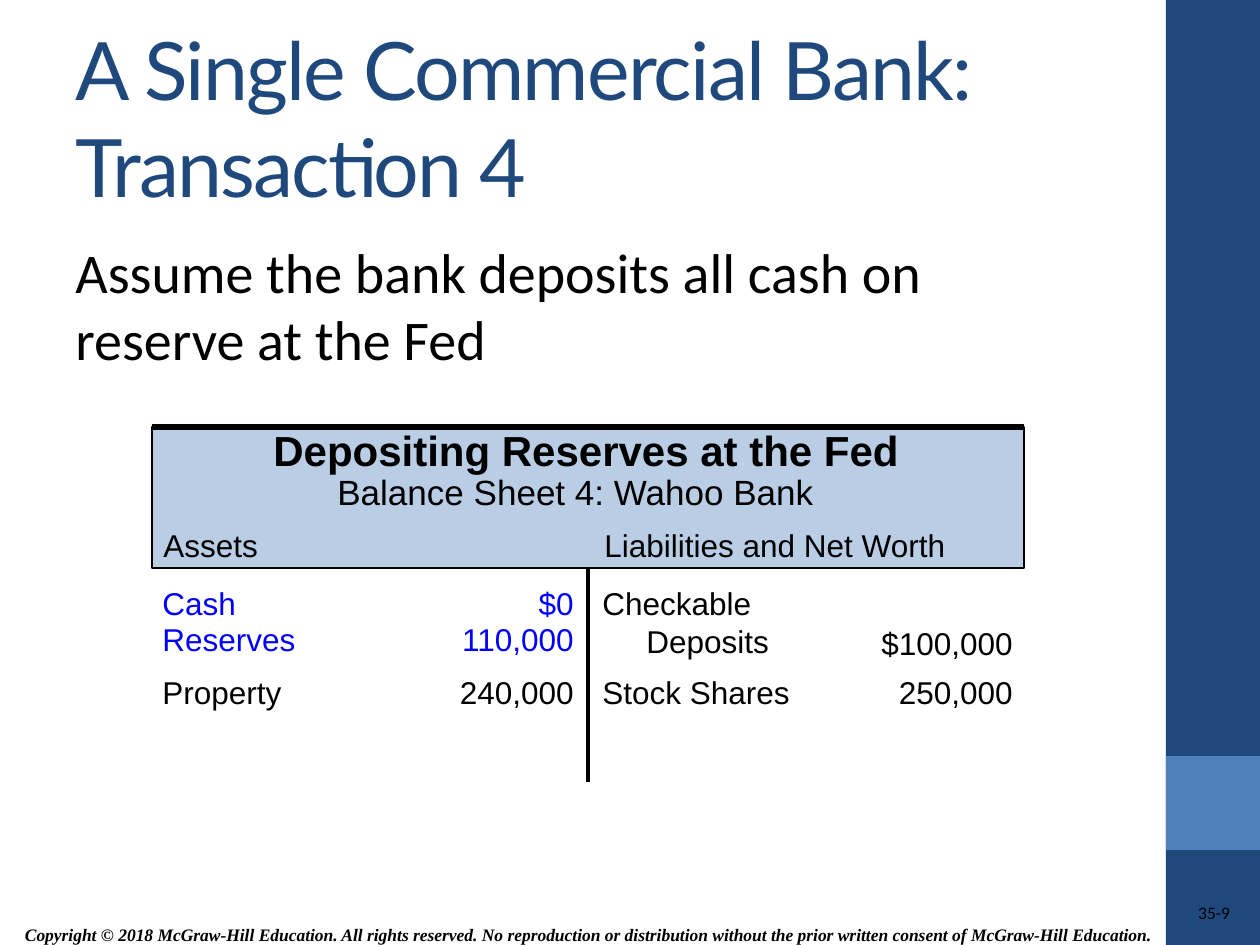
"""Build the balance sheet slide for transaction 4 of a single commercial bank."""
from dataclasses import dataclass

from lxml import etree
from pptx import Presentation
from pptx.dml.color import RGBColor
from pptx.enum.shapes import MSO_CONNECTOR, MSO_SHAPE
from pptx.enum.text import MSO_ANCHOR, PP_ALIGN
from pptx.oxml.ns import qn
from pptx.util import Emu, Pt

LEFT, MID, RIGHT = PP_ALIGN.LEFT, PP_ALIGN.CENTER, PP_ALIGN.RIGHT
TOP, CENTER = MSO_ANCHOR.TOP, MSO_ANCHOR.MIDDLE
RECT, LINE = MSO_SHAPE.RECTANGLE, MSO_CONNECTOR.STRAIGHT


@dataclass(frozen=True)
class Theme:
    navy: str = "1F497D"
    blue: str = "4F81BD"
    pale: str = "B9CDE5"
    black: str = "000000"
    fresh: str = "0000FF"
    head: str = "Lato"
    body: str = "Calibri"
    sheet: str = "Arial"
    legal: str = "Times New Roman"
    title: int = 46
    lead: int = 32
    name: int = 24
    sub: int = 20
    cell: int = 18
    small: int = 10


T = Theme()
SCALE = 914400 / 126

TITLE = "A Single Commercial Bank: Transaction 4"
LEAD = "Assume the bank deposits all cash on reserve at the Fed"
LEGAL = ("Copyright © 2018 McGraw-Hill Education. All rights reserved. No reproduction or "
         "distribution without the prior written consent of McGraw-Hill Education.")
PAGE = "35-9"

BARS = [(0, 945, T.navy), (756, 94, T.blue)]
HEADS = [
    ("Depositing Reserves at the Fed", 261, 418, 680, 63, T.name, True),
    ("Balance Sheet 4: Wahoo Bank", 325, 464, 530, 55, T.sub, False),
    ("Assets", 151, 520, 140, 50, T.cell, False),
    ("Liabilities and Net Worth", 592, 520, 390, 50, T.cell, False),
]
ASSETS = [
    ("Cash", "$0", 578, T.fresh),
    ("Reserves", "110,000", 614, T.fresh),
    ("Property", "240,000", 667, T.black),
]
DEBTS = [
    ("Checkable\nDeposits", "$100,000", 578, 618),
    ("Stock Shares", "250,000", 667, 667),
]
SHEET = (152, 427, 872, 141)
ASSET_X, ASSET_END = 150, 586
DEBT_X, DEBT_END = 590, 1025
NAME_W, SUM_W = 230, 180
ROW, STEP, INDENT, FOOT = 50, 38, 44, 782


def px(num):
    return Emu(round(num * SCALE))


def rgb(code):
    return RGBColor.from_string(code)


def add_box(slide, box, fill, edge=None):
    shape = slide.shapes.add_shape(RECT, *map(px, box))
    shape.shadow.inherit = False
    shape.fill.solid()
    shape.fill.fore_color.rgb = rgb(fill)
    if edge:
        shape.line.color.rgb = rgb(edge)
        shape.line.width = Pt(0.75)
    else:
        shape.line.fill.background()
    return shape


def add_rule(slide, start, end, width):
    rule = slide.shapes.add_connector(LINE, *map(px, start + end))
    rule.line.color.rgb = rgb(T.black)
    rule.line.width = Pt(width)
    etree.SubElement(rule._element.spPr, qn("a:effectLst"))
    return rule


def add_text(slide, text, box, size, face, color=T.black, align=LEFT, anchor=TOP,
             bold=False, slant=False):
    frame = slide.shapes.add_textbox(*map(px, box)).text_frame
    frame.word_wrap = True
    frame.vertical_anchor = anchor
    frame.text = text
    for para in frame.paragraphs:
        para.alignment = align
        for run in para.runs:
            font = run.font
            font.name, font.size = face, Pt(size)
            font.bold, font.italic = bold, slant
            font.color.rgb = rgb(color)
    return frame


def add_name(slide, text, x, y, color=T.black):
    box = (x, y, NAME_W, ROW + STEP * text.count("\n"))
    frame = add_text(slide, text, box, T.cell, T.sheet, color)
    for para in frame.paragraphs[1:]:
        para._p.get_or_add_pPr().set("marL", str(px(INDENT)))


def add_sum(slide, text, end, y, color=T.black):
    add_text(slide, text, (end - SUM_W, y, SUM_W, ROW), T.cell, T.sheet, color, RIGHT)


def add_frame(slide):
    for y, height, color in BARS:
        add_box(slide, (1166, y, 94, height), color)
    add_text(slide, LEGAL, (7, 917, 1162, 35), T.small, T.legal, align=MID,
             anchor=CENTER, bold=True, slant=True)
    page = add_text(slide, PAGE, (984, 902, 246, 25), T.small, T.body, align=RIGHT)
    page.margin_left = page.margin_right = page.margin_top = page.margin_bottom = 0
    title = add_text(slide, TITLE, (63, 38, 1050, 158), T.title, T.head, T.navy,
                     anchor=CENTER)
    title.paragraphs[0].runs[0].font._element.set("spc", "-100")
    add_text(slide, LEAD, (63, 231, 1050, 149), T.lead, T.body)


def add_sheet(slide):
    x, y, width, height = SHEET
    mid, base = x + width // 2, y + height
    stem = add_rule(slide, (mid, base), (mid, FOOT), 2.25)
    panel = add_box(slide, SHEET, T.pale, T.black)
    stem.begin_connect(panel, 2)
    add_rule(slide, (x, y), (x + width, y), 3)
    for text, left, top, wide, high, size, bold in HEADS:
        add_text(slide, text, (left, top, wide, high), size, T.sheet, bold=bold)
    for name, worth, top, color in ASSETS:
        add_name(slide, name, ASSET_X, top, color)
        add_sum(slide, worth, ASSET_END, top, color)
    for name, worth, top, low in DEBTS:
        add_name(slide, name, DEBT_X, top)
        add_sum(slide, worth, DEBT_END, low)


def main():
    deck = Presentation()
    deck.slide_width, deck.slide_height = px(1260), px(945)
    slide = deck.slides.add_slide(deck.slide_layouts[6])
    add_frame(slide)
    add_sheet(slide)
    deck.save("out.pptx")


if __name__ == "__main__":
    main()
